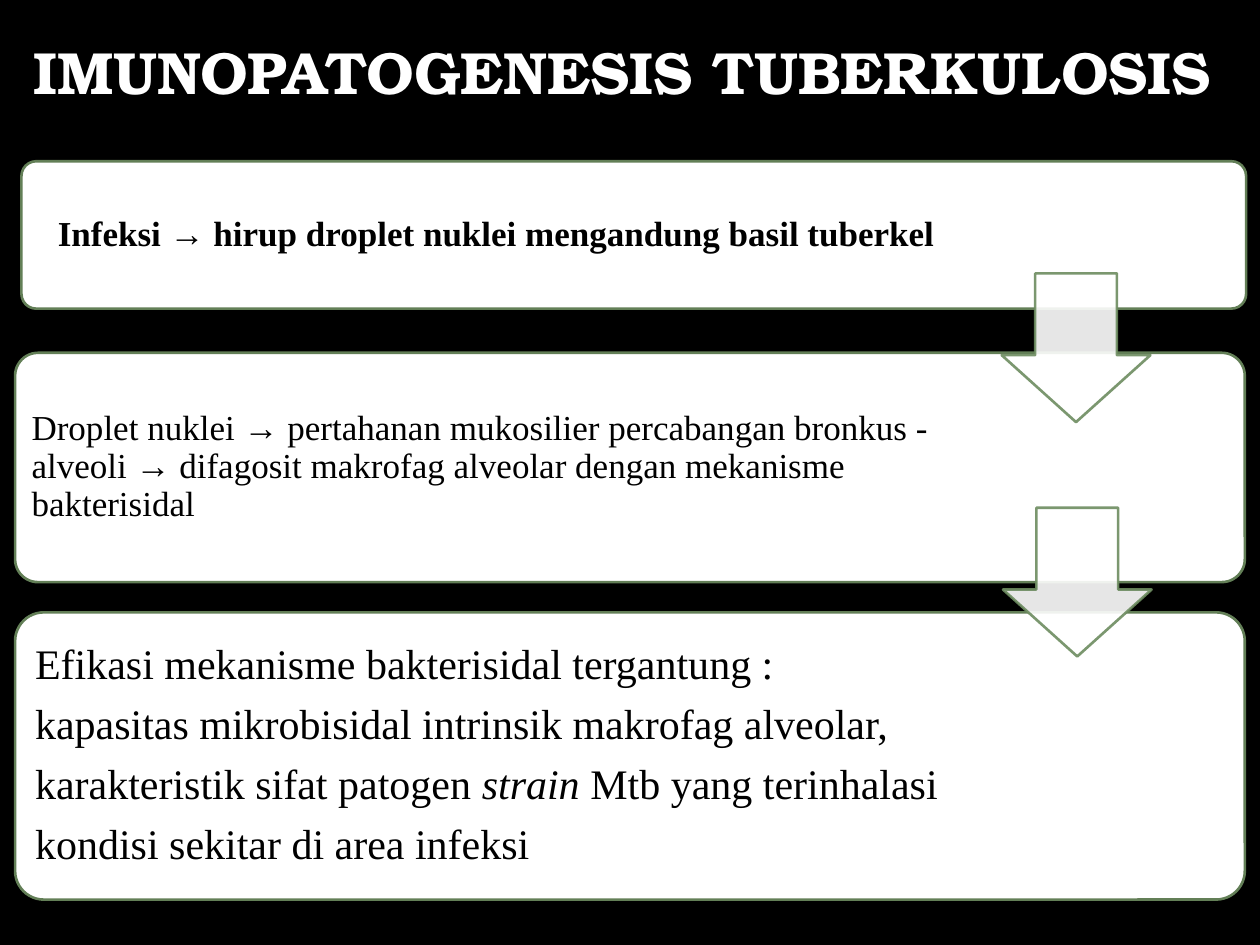
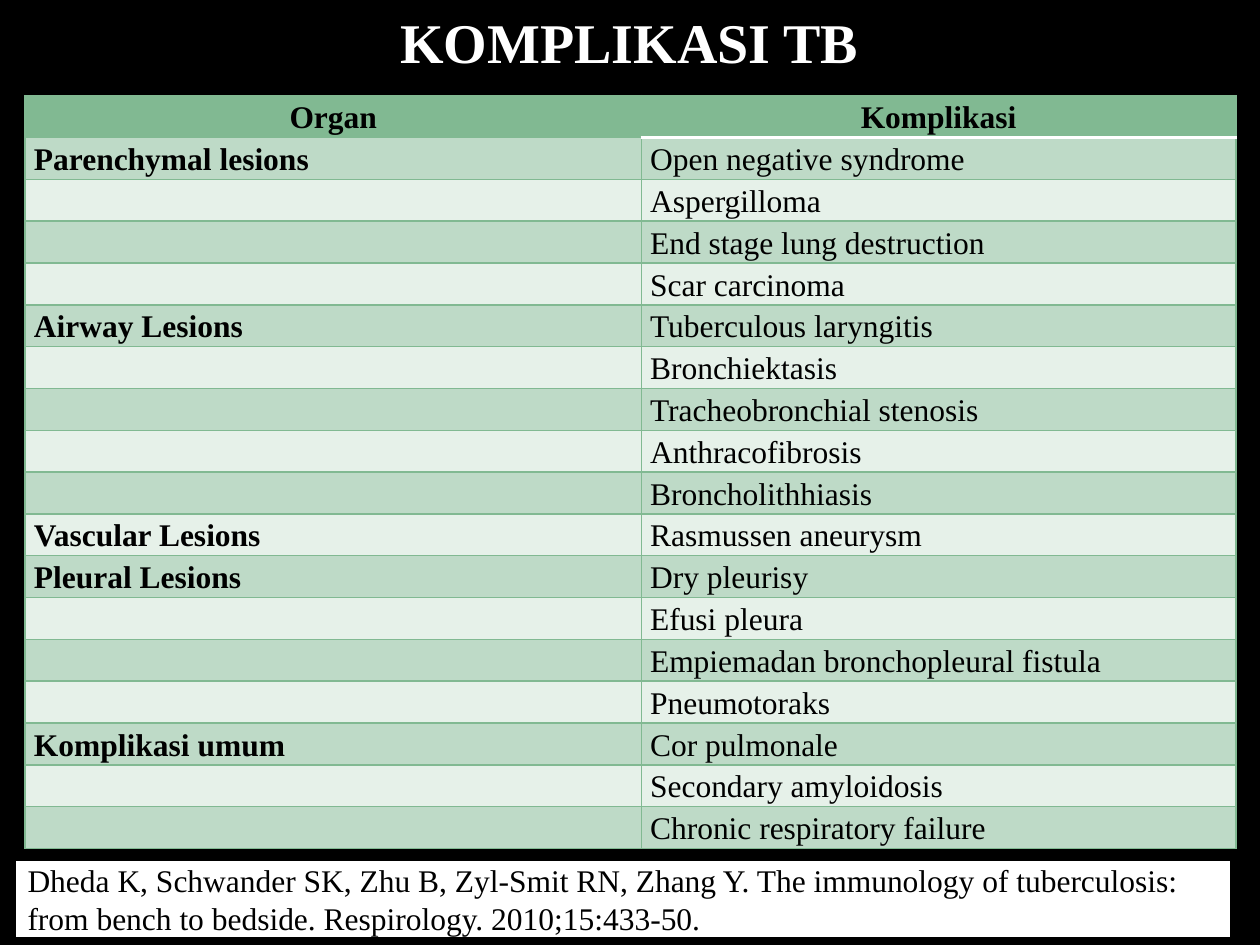
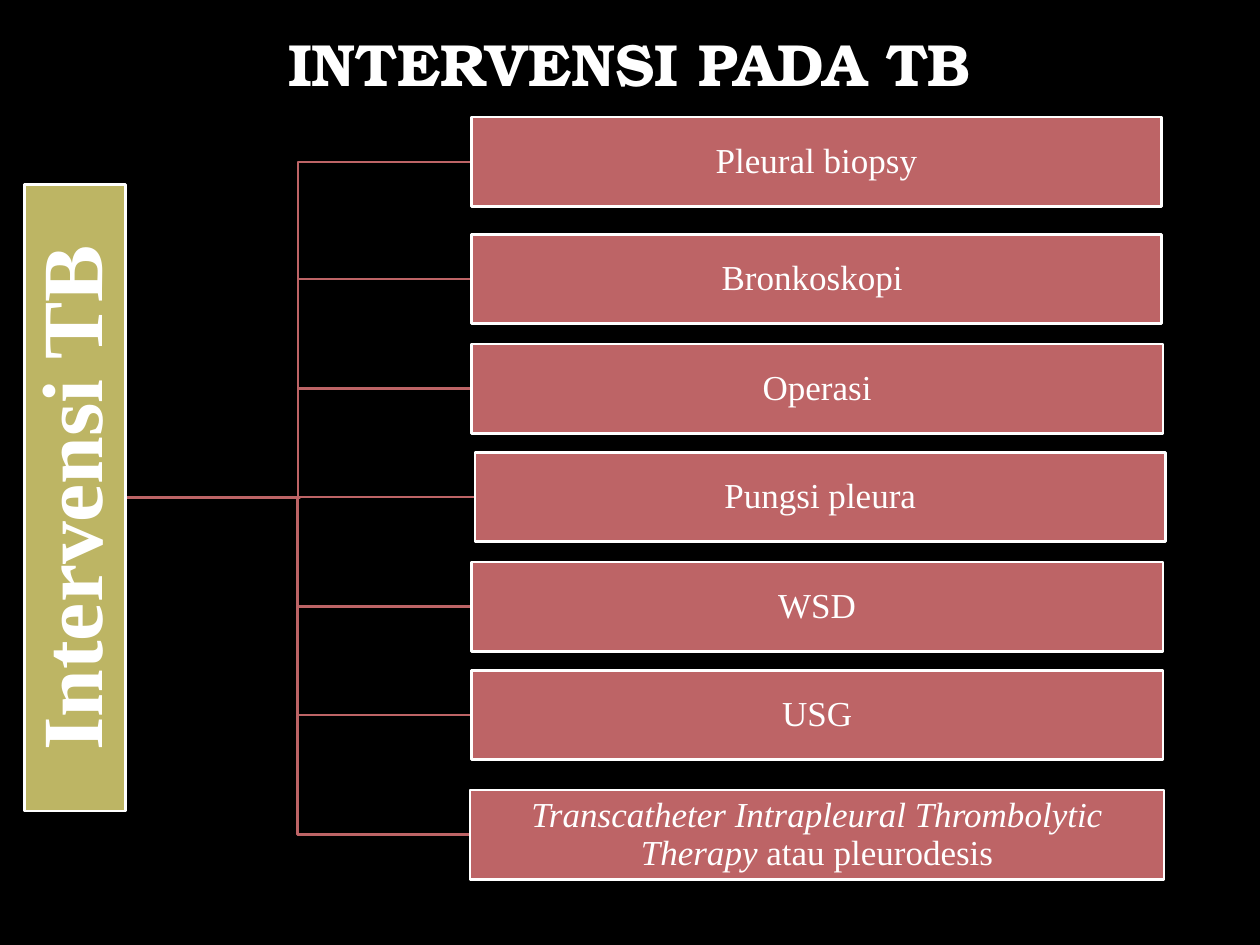
from typing import Any, NamedTuple

from lxml import etree
from pptx import Presentation
from pptx.dml.color import RGBColor
from pptx.enum.shapes import MSO_SHAPE
from pptx.enum.text import MSO_ANCHOR, PP_ALIGN
from pptx.oxml.ns import qn
from pptx.util import Inches, Pt

RECTANGLE = MSO_SHAPE.RECTANGLE
ROUNDED = MSO_SHAPE.ROUNDED_RECTANGLE
DOWN_ARROW = MSO_SHAPE.DOWN_ARROW
MIDDLE = MSO_ANCHOR.MIDDLE
LEFT, CENTER, JUSTIFY = PP_ALIGN.LEFT, PP_ALIGN.CENTER, PP_ALIGN.JUSTIFY

COLORS = {
    "black": "000000",
    "white": "FFFFFF",
    "panel_line": "637F57",
    "arrow_line": "6D8C60",
    "table_green": "81B992",
    "band_dark": "BEDAC7",
    "band_light": "E6F1E9",
    "olive": "BDB564",
    "red": "BD6466",
}
SERIF = "Times New Roman"
DISPLAY = "TeX Gyre Bonum"
LINE_WIDTH = 1.5
DEFAULT_MARGINS = (0.1, 0.05, 0.1, 0.05)


class Box(NamedTuple):
    left: float
    top: float
    width: float
    height: float

    def lengths(self) -> list[int]:
        return [Inches(value) for value in self]


class Style(NamedTuple):
    size: float
    color: str = "black"
    font: str = SERIF
    bold: bool = False
    align: Any = LEFT
    line_spacing: float = 0.9
    space_after: float = 0


class Run(NamedTuple):
    text: str
    italic: bool = False


class Panel(NamedTuple):
    frame: Box
    text_box: Box
    margin: float
    style: Style
    paragraphs: list[list[Run]]


class Intervention(NamedTuple):
    top: float
    runs: list[Run]
    left: float = 3.74
    width: float = 5.49


# Shared drawing functions

def rgb(name: str) -> RGBColor:
    return RGBColor.from_string(COLORS[name])


def set_attributes(target: Any, values: dict[str, Any]) -> None:
    for name, value in values.items():
        setattr(target, name, value)


def write_paragraph(paragraph: Any, runs: list[Run], style: Style) -> None:
    set_attributes(paragraph, {
        "alignment": style.align,
        "line_spacing": style.line_spacing,
        "space_after": Pt(style.space_after),
    })
    for item in runs:
        run = paragraph.add_run()
        run.text = item.text
        set_attributes(run.font, {
            "name": style.font, "size": Pt(style.size),
            "bold": style.bold, "italic": item.italic,
        })
        run.font.color.rgb = rgb(style.color)


def write_text(shape: Any, paragraphs: list[list[Run]], style: Style,
               margins: tuple[float, ...] = DEFAULT_MARGINS) -> None:
    frame = shape.text_frame
    left, top, right, bottom = (Inches(value) for value in margins)
    set_attributes(frame, {
        "word_wrap": True, "vertical_anchor": MIDDLE,
        "margin_left": left, "margin_top": top,
        "margin_right": right, "margin_bottom": bottom,
    })
    for index, runs in enumerate(paragraphs):
        paragraph = frame.add_paragraph() if index else frame.paragraphs[0]
        write_paragraph(paragraph, runs, style)


def set_line(shape: Any, color: str) -> None:
    shape.line.color.rgb = rgb(color)
    shape.line.width = Pt(LINE_WIDTH)


def add_filled(slide: Any, kind: Any, box: Box, fill: str, line: str,
               adjustments: tuple[float, ...] = ()) -> Any:
    shape = slide.shapes.add_shape(kind, *box.lengths())
    shape.shadow.inherit = False
    shape.fill.solid()
    shape.fill.fore_color.rgb = rgb(fill)
    set_line(shape, line)
    for index, value in enumerate(adjustments):
        shape.adjustments[index] = value
    return shape


def set_opacity(shape: Any, percent: int) -> None:
    for color in shape._element.spPr.iter(qn("a:srgbClr")):
        etree.SubElement(color, qn("a:alpha")).set("val", str(percent * 1000))


def add_titled_slide(presentation: Any, title: str, box: Box,
                     size: float = 34, font: str = DISPLAY) -> Any:
    slide = presentation.slides.add_slide(presentation.slide_layouts[6])
    slide.background.fill.solid()
    slide.background.fill.fore_color.rgb = rgb("black")
    text_box = slide.shapes.add_textbox(*box.lengths())
    write_text(text_box, [[Run(title)]], Style(size, "white", font, True, CENTER))
    return slide


# Slide 1: three steps joined by arrows

STEPS = [
    Panel(Box(0.17, 1.28, 9.72, 1.17), Box(0.2, 1.32, 7.48, 1.1), 0.08,
          Style(20, bold=True, align=CENTER),
          [[Run("Infeksi → hirup droplet nuklei mengandung basil tuberkel")]]),
    Panel(Box(0.12, 2.8, 9.76, 1.82), Box(0.17, 2.85, 7.41, 1.71), 0.08,
          Style(20),
          [[Run("Droplet nuklei → pertahanan mukosilier percabangan bronkus - "
                "alveoli → difagosit makrofag alveolar dengan mekanisme "
                "bakterisidal")]]),
    Panel(Box(0.12, 4.86, 9.76, 2.28), Box(0.18, 4.93, 7.38, 2.14), 0.1,
          Style(24, space_after=8.4),
          [[Run("Efikasi mekanisme bakterisidal tergantung :")],
           [Run("kapasitas mikrobisidal intrinsik makrofag alveolar,")],
           [Run("karakteristik sifat patogen "), Run("strain ", True),
            Run("Mtb yang terinhalasi")],
           [Run("kondisi sekitar di area infeksi")]]),
]
ARROWS = [Box(7.95, 2.17, 1.18, 1.18), Box(7.96, 4.03, 1.18, 1.18)]


def build_pathogenesis(presentation: Any) -> None:
    slide = add_titled_slide(presentation, "IMUNOPATOGENESIS TUBERKULOSIS",
                             Box(0, 0.13, 9.88, 0.94))
    for step in STEPS:
        add_filled(slide, ROUNDED, step.frame, "white", "panel_line", (0.1,))
        text_box = slide.shapes.add_textbox(*step.text_box.lengths())
        write_text(text_box, step.paragraphs, step.style, (step.margin,) * 4)
    for box in ARROWS:
        arrow = add_filled(slide, DOWN_ARROW, box, "white", "arrow_line",
                           (0.55, 0.45))
        set_opacity(arrow, 90)


# Slide 2: table of complications

COMPLICATIONS = {
    "Parenchymal lesions": [
        "Open negative syndrome", "Aspergilloma",
        "End stage lung destruction", "Scar carcinoma"],
    "Airway Lesions": [
        "Tuberculous laryngitis", "Bronchiektasis",
        "Tracheobronchial stenosis", "Anthracofibrosis", "Broncholithhiasis"],
    "Vascular Lesions": ["Rasmussen aneurysm"],
    "Pleural Lesions": [
        "Dry pleurisy", "Efusi pleura",
        "Empiemadan bronchopleural fistula", "Pneumotoraks"],
    "Komplikasi umum": [
        "Cor pulmonale", "Secondary amyloidosis",
        "Chronic respiratory failure"],
}
COLUMN_WIDTHS = (4.89, 4.72)
TABLE_BOX = Box(0.2, 0.76, 9.61, 5.98)
TABLE_LINE_SPACING = 1.08  # keeps each line within its row height
CITATION = ("Dheda K, Schwander SK, Zhu B, Zyl-Smit RN, Zhang Y. "
            "The immunology of tuberculosis: from bench to bedside. "
            "Respirology. 2010;15:433-50.")


def set_borders(cell: Any, white_side: str = "") -> None:
    properties = cell._tc.get_or_add_tcPr()
    for index, side in enumerate(("lnL", "lnR", "lnT", "lnB")):
        color, width = (("white", 1.5) if side == white_side
                        else ("table_green", 1))
        line = etree.Element(qn(f"a:{side}"), w=str(Pt(width)))
        fill = etree.SubElement(line, qn("a:solidFill"))
        etree.SubElement(fill, qn("a:srgbClr"), val=COLORS[color])
        properties.insert(index, line)


def fill_cell(cell: Any, text: str, fill: str, style: Style) -> None:
    set_attributes(cell, {
        "margin_left": Inches(0.07), "margin_right": Inches(0.07),
        "margin_top": 0, "margin_bottom": 0, "vertical_anchor": MIDDLE,
    })
    cell.fill.solid()
    cell.fill.fore_color.rgb = rgb(fill)
    if text:
        write_paragraph(cell.text_frame.paragraphs[0], [Run(text)], style)


def build_complications(presentation: Any) -> None:
    slide = add_titled_slide(presentation, "KOMPLIKASI TB",
                             Box(0.75, 0.04, 8.49, 0.64), 32, SERIF)
    rows = [("Organ", "Komplikasi")]
    for organ, items in COMPLICATIONS.items():
        rows += [("" if index else organ, item)
                 for index, item in enumerate(items)]
    table = slide.shapes.add_table(len(rows), 2, *TABLE_BOX.lengths()).table
    table.horz_banding = False
    for column, width in zip(table.columns, COLUMN_WIDTHS):
        column.width = Inches(width)
    for row_index, texts in enumerate(rows):
        header = row_index == 0
        table.rows[row_index].height = Inches(TABLE_BOX.height / len(rows))
        band = "band_dark" if row_index % 2 else "band_light"
        for column_index, text in enumerate(texts):
            cell = table.cell(row_index, column_index)
            style = Style(18, bold=header or column_index == 0,
                          align=CENTER if header else JUSTIFY,
                          line_spacing=TABLE_LINE_SPACING)
            fill_cell(cell, text, "table_green" if header else band, style)
            # A white rule separates the second heading from its column
            white_sides = {(0, 1): "lnB", (1, 1): "lnT"}
            set_borders(cell, white_sides.get((row_index, column_index), ""))

    citation = add_filled(slide, RECTANGLE, Box(0.12, 6.82, 9.65, 0.63),
                          "white", "black")
    write_text(citation, [[Run(CITATION)]], Style(18, line_spacing=1))


# Slide 3: tree of interventions

INTERVENTIONS = [
    Intervention(0.93, [Run("Pleural biopsy")], width=5.48),
    Intervention(1.86, [Run("Bronkoskopi ")], width=5.48),
    Intervention(2.73, [Run("Operasi")]),
    Intervention(3.59, [Run("Pungsi pleura")], left=3.77, width=5.48),
    Intervention(4.46, [Run("WSD")]),
    Intervention(5.32, [Run("USG")]),
    Intervention(6.27, [
        Run("Transcatheter Intrapleural Thrombolytic Therapy ", True),
        Run("atau pleurodesis")], left=3.73, width=5.51),
]
BOX_HEIGHT = 0.71
ROOT_RIGHT, ROOT_MIDDLE = 0.99, 3.95


def add_branch(slide: Any, end_x: float, end_y: float) -> None:
    bend = (ROOT_RIGHT + end_x) / 2
    points = [(bend, ROOT_MIDDLE), (bend, end_y), (end_x, end_y)]
    builder = slide.shapes.build_freeform(Inches(ROOT_RIGHT),
                                          Inches(ROOT_MIDDLE))
    builder.add_line_segments([(Inches(x), Inches(y)) for x, y in points],
                              close=False)
    branch = builder.convert_to_shape()
    branch.shadow.inherit = False
    branch.fill.background()
    set_line(branch, "red")


def build_interventions(presentation: Any) -> None:
    slide = add_titled_slide(presentation, "INTERVENSI PADA TB",
                             Box(0.75, 0.13, 8.49, 0.8))
    for item in reversed(INTERVENTIONS):
        add_branch(slide, item.left, item.top + BOX_HEIGHT / 2)

    root = add_filled(slide, RECTANGLE, Box(-1.89, 3.55, 4.97, 0.8),
                      "olive", "white")
    root.rotation = 270
    write_text(root, [[Run("Intervensi TB")]],
               Style(49, "white", bold=True, align=CENTER), (0.03,) * 4)

    for item in INTERVENTIONS:
        box = Box(item.left, item.top, item.width, BOX_HEIGHT)
        shape = add_filled(slide, RECTANGLE, box, "red", "white")
        write_text(shape, [item.runs], Style(20, "white", align=CENTER),
                   (0.01,) * 4)


def main() -> None:
    presentation = Presentation()
    presentation.slide_width = Inches(10)
    presentation.slide_height = Inches(7.5)
    build_pathogenesis(presentation)
    build_complications(presentation)
    build_interventions(presentation)
    presentation.save("out.pptx")


if __name__ == "__main__":
    main()
